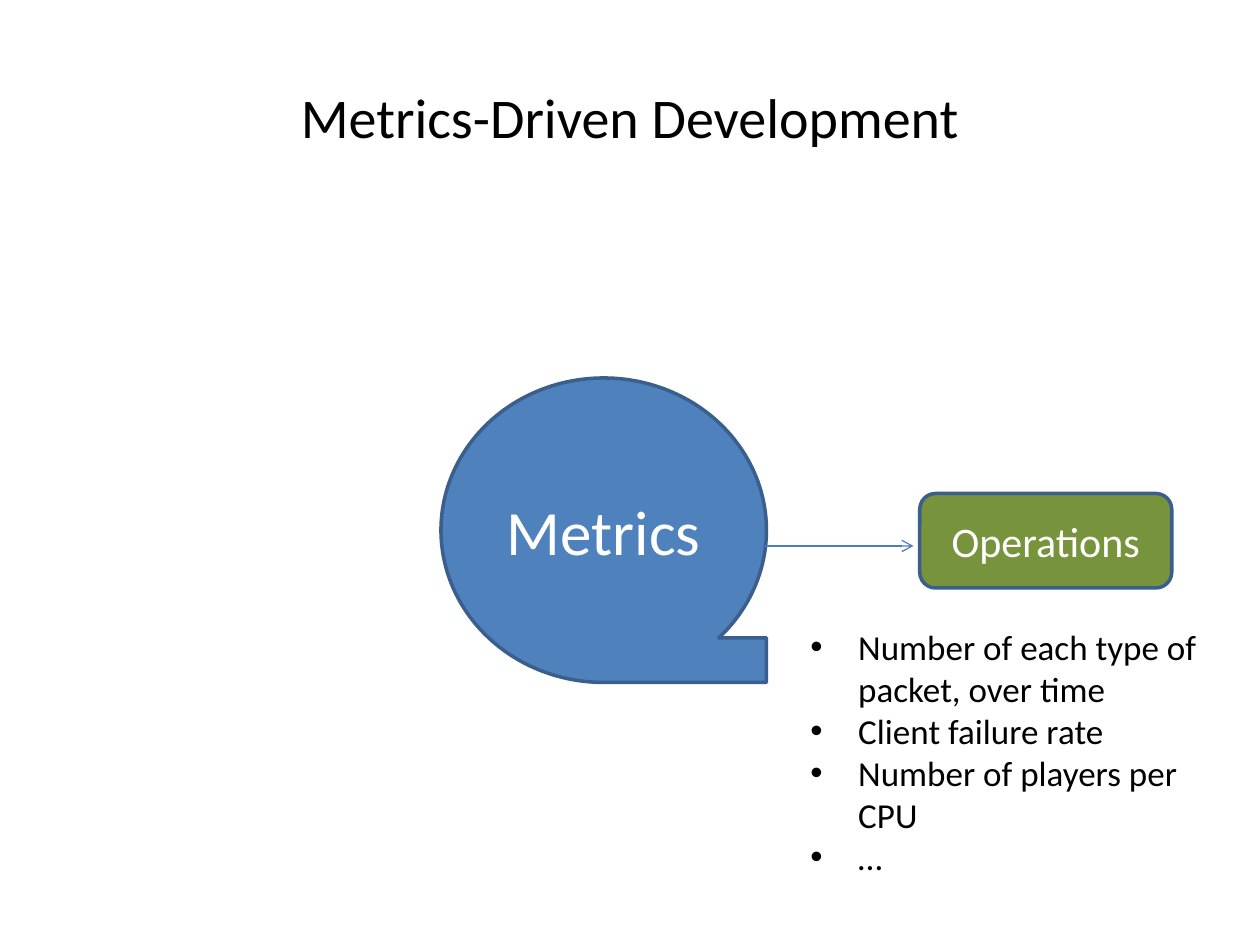
"""Build the Metrics-Driven Development slide."""
from dataclasses import dataclass

from lxml import etree
from pptx import Presentation
from pptx.dml.color import RGBColor
from pptx.enum.shapes import MSO_CONNECTOR, MSO_SHAPE
from pptx.enum.text import MSO_ANCHOR, PP_ALIGN
from pptx.oxml.ns import qn
from pptx.util import Inches, Pt

TAPE = MSO_SHAPE.FLOWCHART_SEQUENTIAL_ACCESS_STORAGE
PROCESS = MSO_SHAPE.FLOWCHART_ALTERNATE_PROCESS
STRAIGHT = MSO_CONNECTOR.STRAIGHT
CENTER, LEFT = PP_ALIGN.CENTER, PP_ALIGN.LEFT
MIDDLE, TOP = MSO_ANCHOR.MIDDLE, MSO_ANCHOR.TOP
WIDTH, HEIGHT = Inches(10), Inches(7.5)
COLUMNS, ROWS = 120, 90


@dataclass(frozen=True)
class Theme:
    """Colours, type sizes and line widths of the slide."""

    font: str = "Calibri"
    ink: str = "000000"
    paper: str = "FFFFFF"
    blue: str = "4F81BD"
    green: str = "77933C"
    outline: str = "3A5F8C"
    arrow: str = "4B7EBC"
    title: int = 32
    hub: int = 36
    branch: int = 24
    detail: int = 20
    border: float = 2
    thin: float = 0.75
    indent: float = 0.38


class SlideBuilder:
    """Places styled elements on a slide by grid columns and rows."""

    def __init__(self, slide, theme):
        """Keep the slide and its theme."""
        self.slide = slide
        self.theme = theme

    def place(self, column, row):
        """Turn a grid position or extent into lengths."""
        return round(WIDTH * column / COLUMNS), round(HEIGHT * row / ROWS)

    def fill_text(self, shape, lines, size, color, align, anchor, bulleted=False):
        """Fill a shape with one styled paragraph per line."""
        frame = shape.text_frame
        frame.word_wrap = True
        frame.vertical_anchor = anchor
        for index, line in enumerate(lines):
            paragraph = frame.add_paragraph() if index else frame.paragraphs[0]
            paragraph.alignment = align
            if bulleted:
                self.bullet(paragraph)
            run = paragraph.add_run()
            run.text = line
            run.font.name = self.theme.font
            run.font.size = Pt(size)
            run.font.color.rgb = RGBColor.from_string(color)

    def bullet(self, paragraph):
        """Give a paragraph a hanging round bullet."""
        properties = paragraph._p.get_or_add_pPr()
        indent = Inches(self.theme.indent)
        properties.set("marL", str(indent))
        properties.set("indent", str(-indent))
        etree.SubElement(properties, qn("a:buFont"), typeface="Arial")
        etree.SubElement(properties, qn("a:buChar"), char="•")

    def text(self, position, extent, lines, size, align=LEFT, anchor=TOP, bulleted=False):
        """Add a text box."""
        box = self.slide.shapes.add_textbox(*self.place(*position), *self.place(*extent))
        self.fill_text(box, lines, size, self.theme.ink, align, anchor, bulleted)

    def node(self, kind, position, extent, label, size, fill):
        """Add an outlined shape with a centred label."""
        shape = self.slide.shapes.add_shape(kind, *self.place(*position), *self.place(*extent))
        shape.shadow.inherit = False
        shape.fill.solid()
        shape.fill.fore_color.rgb = RGBColor.from_string(fill)
        shape.line.color.rgb = RGBColor.from_string(self.theme.outline)
        shape.line.width = Pt(self.theme.border)
        self.fill_text(shape, [label], size, self.theme.paper, CENTER, MIDDLE)

    def arrow(self, tip, tail):
        """Add a thin line with an open arrowhead at its tip."""
        line = self.slide.shapes.add_connector(STRAIGHT, *self.place(*tip), *self.place(*tail))
        line.line.color.rgb = RGBColor.from_string(self.theme.arrow)
        line.line.width = Pt(self.theme.thin)
        outline = line._element.spPr.find(qn("a:ln"))
        etree.SubElement(outline, qn("a:headEnd"), type="arrow")
        etree.SubElement(line._element.spPr, qn("a:effectLst"))


def main():
    """Compose and save the slide."""
    deck = Presentation()
    deck.slide_width, deck.slide_height = WIDTH, HEIGHT
    theme = Theme()
    builder = SlideBuilder(deck.slides.add_slide(deck.slide_layouts[6]), theme)

    builder.text((6, 3.6), (108, 15), ["Metrics-Driven Development"], theme.title, CENTER, MIDDLE)
    builder.node(TAPE, (42, 36), (31, 29), "Metrics", theme.hub, theme.blue)
    builder.arrow(tip=(87, 52), tail=(72.9, 52))
    builder.node(PROCESS, (87.6, 47), (24, 9), "Operations", theme.branch, theme.green)
    operations_metrics = [
        "Number of each type of packet, over time",
        "Client failure rate",
        "Number of players per CPU",
        "…",
    ]
    builder.text((76, 59), (41, 28), operations_metrics, theme.detail, bulleted=True)
    deck.save("out.pptx")


if __name__ == "__main__":
    main()
